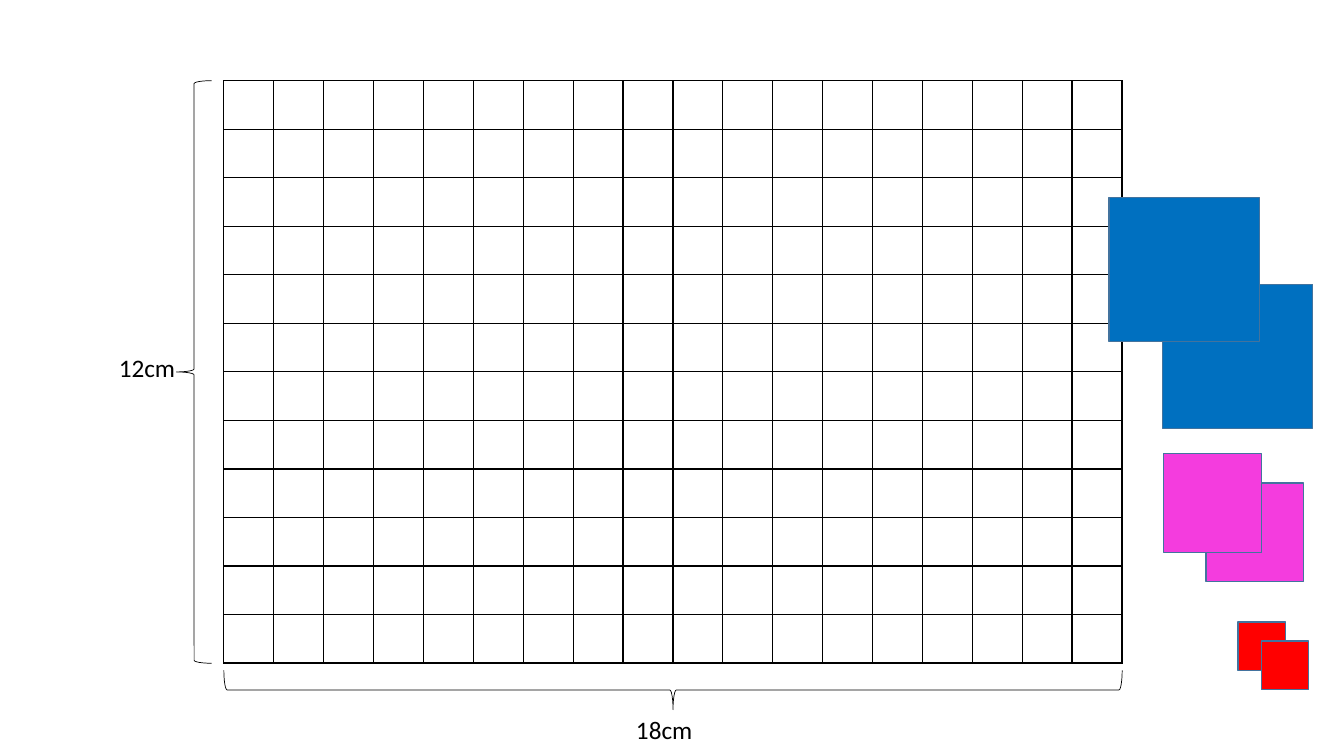
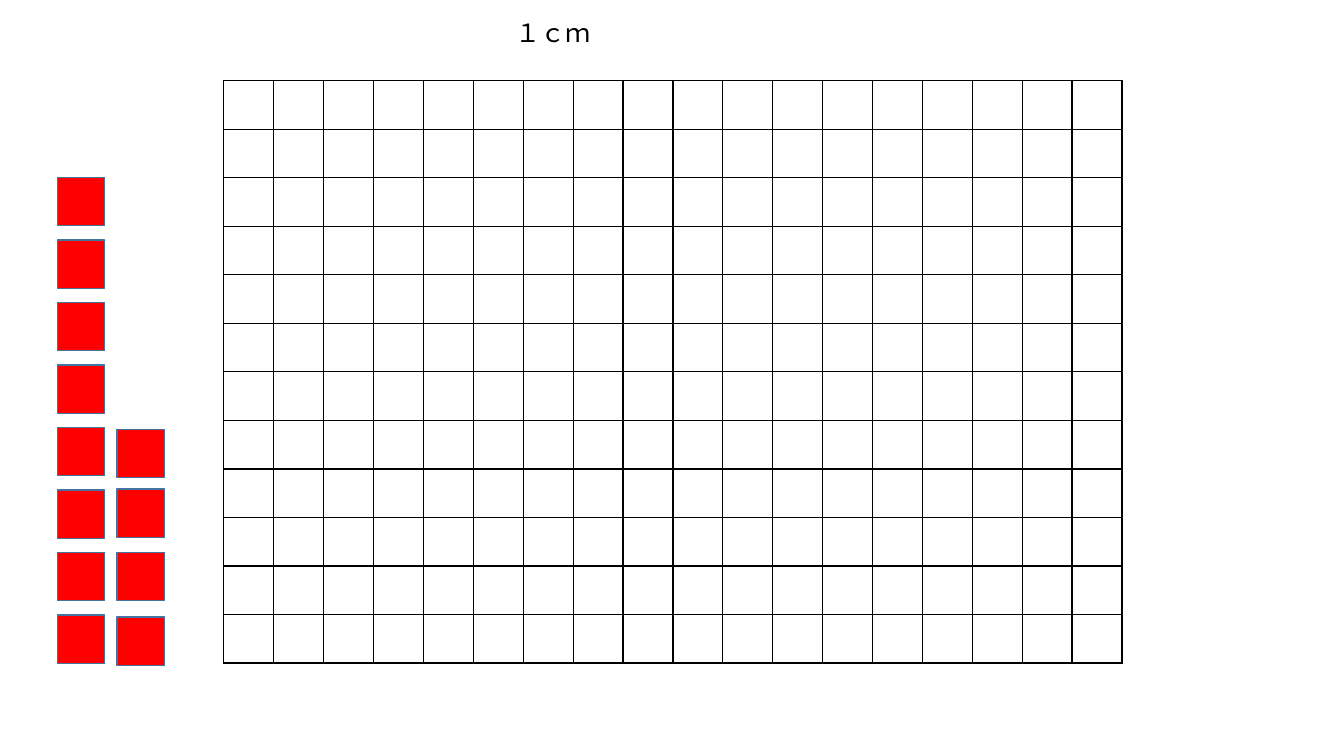
"""Build two slides about tiling a 12 by 18 cm grid with squares."""
import dataclasses

import lxml.etree
import pptx
import pptx.dml.color
import pptx.enum.shapes
import pptx.oxml.ns
import pptx.util

Inches = pptx.util.Inches
Pt = pptx.util.Pt
MSO_SHAPE = pptx.enum.shapes.MSO_SHAPE


@dataclasses.dataclass(frozen=True)
class Theme:
    """Colours, type and line widths shared by the slides."""
    ink: str = "000000"
    paper: str = "FFFFFF"
    small: str = "FF0000"
    medium: str = "F43CDE"
    large: str = "0070C0"
    outline: str = "43739E"
    font: str = "Calibri"
    label_size: int = 18
    brace_width: float = 0.5
    rule_width: float = 1


THEME = Theme()
GRID_LEFT, GRID_TOP, GRID_WIDTH, GRID_HEIGHT = 2.22, 0.8, 8.91, 5.78
GRID_COLUMNS, GRID_ROWS = 18, 12
SMALL, MEDIUM, LARGE = (0.47, 0.48), (0.97, 0.98), (1.49, 1.43)


def rgb(code):
    """Turn a hex code into a colour."""
    return pptx.dml.color.RGBColor.from_string(code)


def add_border(cell):
    """Rule all four sides of a cell."""
    properties = cell._tc.get_or_add_tcPr()
    qn = pptx.oxml.ns.qn
    for side in ("a:lnL", "a:lnR", "a:lnT", "a:lnB"):
        rule = lxml.etree.SubElement(properties, qn(side), w=str(Pt(THEME.rule_width)))
        fill = lxml.etree.SubElement(rule, qn("a:solidFill"))
        lxml.etree.SubElement(fill, qn("a:srgbClr"), val=THEME.ink)


def add_grid(slide):
    """Draw the empty centimetre grid."""
    grid = slide.shapes.add_table(
        GRID_ROWS, GRID_COLUMNS, Inches(GRID_LEFT), Inches(GRID_TOP),
        Inches(GRID_WIDTH), Inches(GRID_HEIGHT)).table
    grid.first_row = grid.horz_banding = False
    for column in grid.columns:
        column.width = Inches(GRID_WIDTH / GRID_COLUMNS)
    for row in grid.rows:
        row.height = Inches(GRID_HEIGHT / GRID_ROWS)
    for cell in grid.iter_cells():
        add_border(cell)
        cell.fill.solid()
        cell.fill.fore_color.rgb = rgb(THEME.paper)


def add_outlined(slide, preset, left, top, width, height, color, line_width):
    """Add a preset shape with a plain outline."""
    shape = slide.shapes.add_shape(
        preset, Inches(left), Inches(top), Inches(width), Inches(height))
    shape.shadow.inherit = False
    shape.line.color.rgb = rgb(color)
    shape.line.width = Pt(line_width)
    return shape


def add_square(slide, left, top, size, color):
    """Add one coloured square."""
    square = add_outlined(slide, MSO_SHAPE.RECTANGLE, left, top, *size,
                          THEME.outline, THEME.rule_width)
    square.fill.solid()
    square.fill.fore_color.rgb = rgb(color)


def add_brace(slide, preset, left, top, width, height, rotation=0):
    """Add a thin measuring brace."""
    brace = add_outlined(slide, preset, left, top, width, height,
                         THEME.ink, THEME.brace_width)
    brace.fill.background()
    brace.rotation = rotation


def add_label(slide, text, left, top, width):
    """Add a length label."""
    frame = slide.shapes.add_textbox(
        Inches(left), Inches(top), Inches(width), Inches(0.4)).text_frame
    frame.word_wrap = True
    paragraph = frame.paragraphs[0]
    paragraph.text = text
    paragraph.font.name = THEME.font
    paragraph.font.size = Pt(THEME.label_size)
    paragraph.font.color.rgb = rgb(THEME.ink)


def add_grid_slide(deck):
    """Start a blank slide that holds the grid."""
    slide = deck.slides.add_slide(deck.slide_layouts[6])
    add_grid(slide)
    return slide


def build_measured_slide(deck):
    """Show the grid's dimensions and three sizes of square."""
    slide = add_grid_slide(deck)
    add_brace(slide, MSO_SHAPE.LEFT_BRACE, 1.75, GRID_TOP, 0.35, GRID_HEIGHT)
    add_label(slide, "12cm", 1.08, 3.45, 0.93)
    add_brace(slide, MSO_SHAPE.RIGHT_BRACE, 6.48, 2.39, 0.39, GRID_WIDTH, rotation=90)
    add_label(slide, "18cm", 6.21, 7.04, 0.93)
    for left, top, size, color in (
            (12.28, 6.17, SMALL, THEME.small),
            (12.51, 6.36, SMALL, THEME.small),
            (11.96, 4.79, MEDIUM, THEME.medium),
            (11.54, 4.5, MEDIUM, THEME.medium),
            (11.53, 2.82, LARGE, THEME.large),
            (11, 1.96, LARGE, THEME.large)):
        add_square(slide, left, top, size, color)


def build_small_squares_slide(deck):
    """Show the grid beside a supply of small squares."""
    slide = add_grid_slide(deck)
    long_stack = [1.76 + 0.62 * step for step in range(8)]
    short_stack = [4.26, 4.85, 5.48, 6.12]
    for left, tops in ((0.57, long_stack), (1.16, short_stack)):
        for top in tops:
            add_square(slide, left, top, SMALL, THEME.small)
    add_label(slide, "１ｃｍ", 5.01, 0.12, 1.12)


def main():
    """Build and save the deck."""
    deck = pptx.Presentation()
    deck.slide_width, deck.slide_height = Inches(13.33), Inches(7.5)
    build_measured_slide(deck)
    build_small_squares_slide(deck)
    deck.save("out.pptx")


if __name__ == "__main__":
    main()
